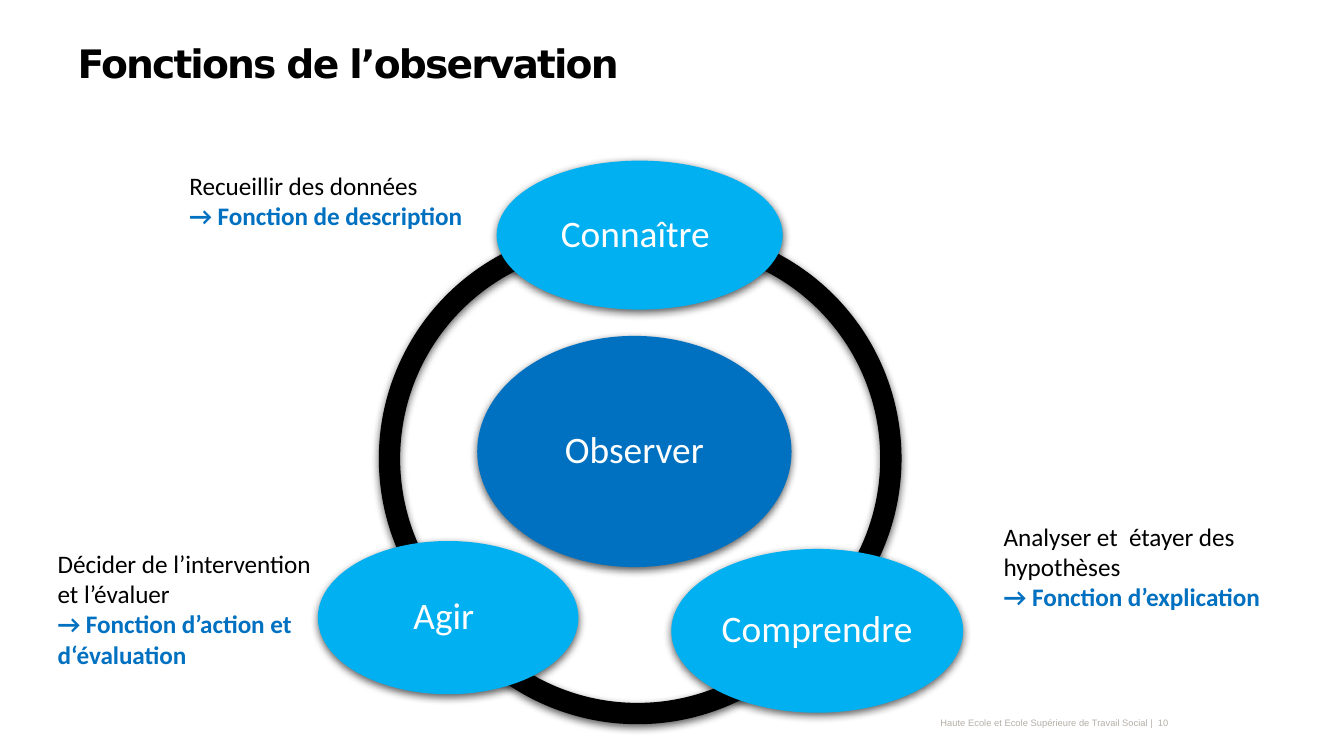
from typing import NamedTuple

from lxml.etree import SubElement
from pptx import Presentation
from pptx.dml.color import RGBColor
from pptx.enum.shapes import MSO_SHAPE as Shape
from pptx.enum.text import MSO_ANCHOR as Anchor, PP_ALIGN as Align
from pptx.oxml.ns import qn
from pptx.util import Cm, Pt

COLORS = {
    "text": "000000",
    "ring": "000000",
    "core": "0070C0",
    "step": "00B0F0",
    "white": "FFFFFF",
    "footer": "B5AEA7",
}
RING_SIZE = 8.76
RING_THICKNESS = 0.046


class Box(NamedTuple):
    left: float
    top: float
    width: float
    height: float


class Arc(NamedTuple):
    """Part of the ring, running clockwise between two angles in degrees."""
    left: float
    top: float
    start: float
    end: float


class Oval(NamedTuple):
    text: str
    box: Box
    color: str
    outlined: bool = True


class Label(NamedTuple):
    task: str
    function: str
    box: Box


ARCS = [
    Arc(7.16, 4.29, 145, 265),
    Arc(7.67, 4.93, 50, 135),
    Arc(8.28, 4.29, 278, 40),
]
OVALS = [
    Oval("Observer", Box(9.02, 6.35, 5.94, 4.37), "core", False),
    Oval("Connaître ", Box(9.4, 3.05, 5.38, 2.79), "step"),
    Oval("Comprendre", Box(12.7, 10.39, 5.49, 3.07), "step"),
    Oval("Agir ", Box(6.02, 10.24, 4.9, 2.87), "step"),
]
LABELS = [
    Label("Recueillir des données", "→ Fonction de description",
          Box(3.33, 3.1, 6.27, 1.98)),
    Label("Analyser et  étayer des hypothèses", "→ Fonction d’explication",
          Box(18.72, 9.73, 5.84, 2.57)),
    Label("Décider de l’intervention et l’évaluer",
          "→ Fonction d’action et d‘évaluation",
          Box(0.84, 10.24, 5.38, 3.15)),
]
TITLE = {"name": "DejaVu Sans", "size": Pt(21), "bold": True}
FOOTER = {"name": "Arial", "size": Pt(5)}
OVAL = {"name": "Calibri", "size": Pt(20)}
TASK = {"name": "Calibri", "size": Pt(13.5)}
FUNCTION = TASK | {"bold": True}


def rgb(color: str) -> RGBColor:
    return RGBColor.from_string(COLORS[color])


def lengths(box: Box) -> list:
    return [Cm(v) for v in box]


def add_run(p, text: str, style: dict, color: str):
    r = p.add_run()
    r.text = text
    for name, value in style.items():
        setattr(r.font, name, value)
    r.font.color.rgb = rgb(color)
    return r


def add_text_box(slide, box: Box):
    tf = slide.shapes.add_textbox(*lengths(box)).text_frame
    tf.word_wrap = True
    return tf


def add_shadowed(slide, kind, box: Box, color: str):
    """Add a filled preset shape with a soft shadow just below it."""
    sp = slide.shapes.add_shape(kind, *lengths(box))
    sp.fill.solid()
    sp.fill.fore_color.rgb = rgb(color)
    sp.line.fill.background()
    sp.shadow.inherit = False
    effects = sp._element.spPr.find(qn("a:effectLst"))
    shadow = SubElement(effects, qn("a:outerShdw"), blurRad=str(Pt(4.5)),
                        dist=str(Pt(1.5)), dir="5400000", algn="ctr",
                        rotWithShape="0")
    tint = SubElement(shadow, qn("a:srgbClr"), val=COLORS["text"])
    SubElement(tint, qn("a:alpha"), val="63000")
    return sp


def add_arc(slide, arc: Arc) -> None:
    box = Box(arc.left, arc.top, RING_SIZE, RING_SIZE)
    sp = add_shadowed(slide, Shape.BLOCK_ARC, box, "ring")
    # Angles are stored in 1/60000 degree, adjustments in 1/100000.
    for i, value in enumerate((arc.start * 0.6, arc.end * 0.6, RING_THICKNESS)):
        sp.adjustments[i] = value


def add_oval(slide, oval: Oval) -> None:
    sp = add_shadowed(slide, Shape.OVAL, oval.box, oval.color)
    if oval.outlined:
        sp.line.color.rgb = rgb(oval.color)
        sp.line.width = Pt(0.75)
    tf = sp.text_frame
    tf.word_wrap = True
    tf.vertical_anchor = Anchor.MIDDLE
    for side in ("left", "top", "right", "bottom"):
        setattr(tf, f"margin_{side}", Cm(0.08))
    p = tf.paragraphs[0]
    p.alignment = Align.CENTER
    p.line_spacing = 0.9
    add_run(p, oval.text, OVAL, "white")


def add_label(slide, label: Label) -> None:
    tf = add_text_box(slide, label.box)
    add_run(tf.paragraphs[0], label.task, TASK, "text")
    add_run(tf.add_paragraph(), label.function, FUNCTION, "core")


def add_title(slide) -> None:
    tf = add_text_box(slide, Box(1.22, 0.61, 14.48, 1.5))
    r = add_run(tf.paragraphs[0], "Fonctions de l’observation", TITLE, "text")
    r.font._element.set("spc", "-100")


def add_footer(slide) -> None:
    tf = add_text_box(slide, Box(16.08, 13.51, 6.27, 0.25))
    tf.vertical_anchor = Anchor.MIDDLE
    p = tf.paragraphs[0]
    p.alignment = Align.RIGHT
    p.line_spacing = Pt(7)
    add_run(p, "Haute Ecole et Ecole Supérieure de Travail Social |  10",
            FOOTER, "footer")


def main() -> None:
    prs = Presentation()
    prs.slide_width, prs.slide_height = Cm(25.4), Cm(14.29)
    slide = prs.slides.add_slide(prs.slide_layouts[6])
    add_footer(slide)
    add_title(slide)
    for arc in ARCS:
        add_arc(slide, arc)
    for oval in OVALS:
        add_oval(slide, oval)
    for label in LABELS:
        add_label(slide, label)
    prs.save("out.pptx")


if __name__ == "__main__":
    main()
